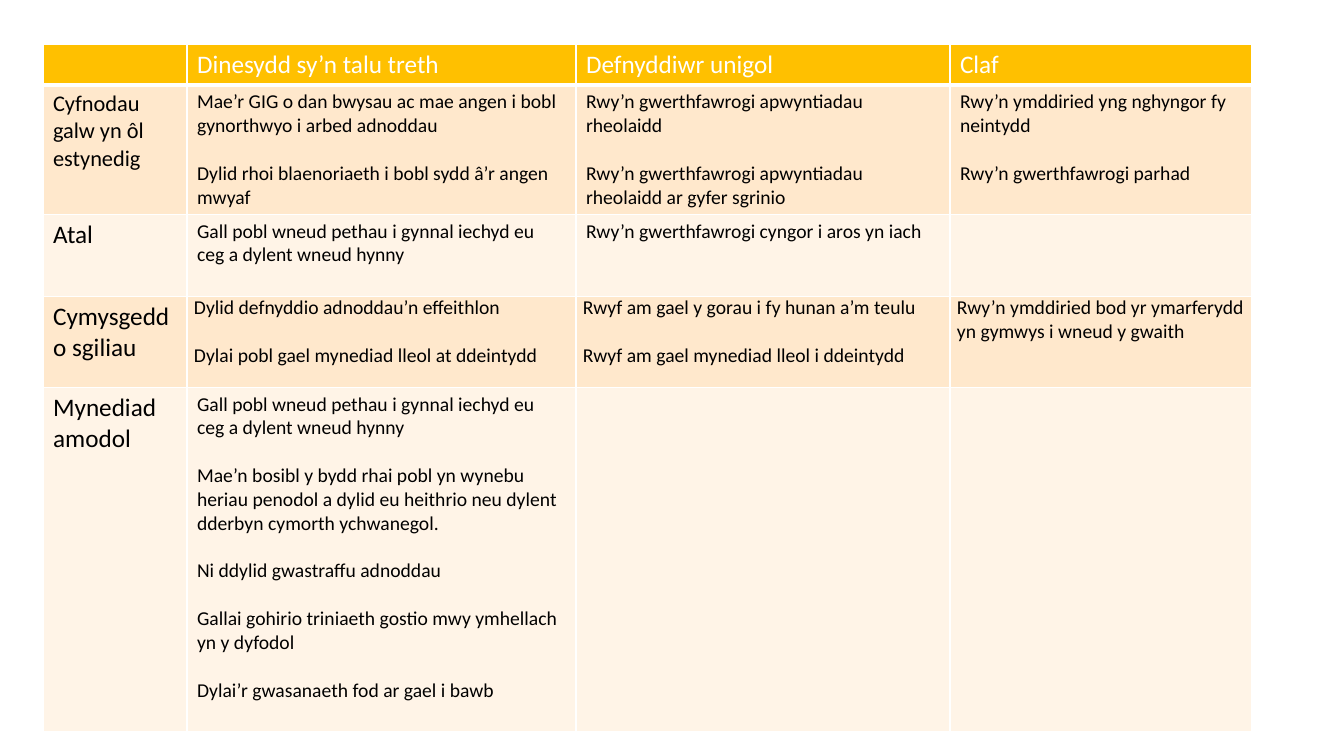
from lxml.etree import SubElement
from pptx import Presentation
from pptx.dml.color import RGBColor
from pptx.oxml.ns import qn
from pptx.util import Inches, Pt

# Content: each cell is a list of paragraphs
HEADINGS = ["", "Dinesydd sy’n talu treth", "Defnyddiwr unigol", "Claf"]
TOPICS = [
    ("Cyfnodau galw yn ôl estynedig", [
        ["Mae’r GIG o dan bwysau ac mae angen i bobl gynorthwyo i arbed adnoddau",
         "Dylid rhoi blaenoriaeth i bobl sydd â’r angen mwyaf"],
        ["Rwy’n gwerthfawrogi apwyntiadau rheolaidd",
         "Rwy’n gwerthfawrogi apwyntiadau rheolaidd ar gyfer sgrinio"],
        ["Rwy’n ymddiried yng nghyngor fy neintydd",
         "Rwy’n gwerthfawrogi parhad"],
    ]),
    ("Atal", [
        ["Gall pobl wneud pethau i gynnal iechyd eu ceg a dylent wneud hynny"],
        ["Rwy’n gwerthfawrogi cyngor i aros yn iach"],
        [],
    ]),
    ("Cymysgedd o sgiliau", [
        ["Dylid defnyddio adnoddau’n effeithlon",
         "Dylai pobl gael mynediad lleol at ddeintydd"],
        ["Rwyf am gael y gorau i fy hunan a’m teulu",
         "Rwyf am gael mynediad lleol i ddeintydd"],
        ["Rwy’n ymddiried bod yr ymarferydd yn gymwys i wneud y gwaith"],
    ]),
    ("Mynediad amodol", [
        ["Gall pobl wneud pethau i gynnal iechyd eu ceg a dylent wneud hynny",
         "Mae’n bosibl y bydd rhai pobl yn wynebu heriau penodol a dylid eu "
         "heithrio neu dylent dderbyn cymorth ychwanegol.",
         "Ni ddylid gwastraffu adnoddau",
         "Gallai gohirio triniaeth gostio mwy ymhellach yn y dyfodol",
         "Dylai’r gwasanaeth fod ar gael i bawb"],
        [],
        [],
    ]),
]

# Layout in px
SLIDE_SIZE = (1344, 756)
TABLE_LEFT, TABLE_TOP = 43, 44
COLUMN_WIDTHS = [144, 389, 374, 302]
ROW_HEIGHTS = [41, 129, 82, 91, 344]
TIGHT_ROW = 3
TIGHT_MARGINS = {"margin_left": 7, "margin_right": 7,
                 "margin_top": 0, "margin_bottom": 0}

# Formats
GOLD = RGBColor(0xFF, 0xC0, 0x00)
PEACH = RGBColor(0xFF, 0xE8, 0xCC)
CREAM = RGBColor(0xFF, 0xF4, 0xE7)
WHITE = RGBColor(0xFF, 0xFF, 0xFF)
BLACK = RGBColor(0x00, 0x00, 0x00)
PARAGRAPH_GAP = Pt(17)


def px(length):
    return round(length * Inches(1) / 100.8)


def add_borders(cell, bottom_width):
    for side in "LRTB":
        width = Pt(bottom_width if side == "B" else 1)
        line = SubElement(cell._tc.get_or_add_tcPr(), qn(f"a:ln{side}"), w=str(width))
        fill = SubElement(line, qn("a:solidFill"))
        SubElement(fill, qn("a:srgbClr"), val=str(WHITE))


def fill_cell(cell, paragraphs, background, size, colour):
    cell.fill.solid()
    cell.fill.fore_color.rgb = background
    frame = cell.text_frame
    frame.text = "\n".join(paragraphs)
    for index, paragraph in enumerate(frame.paragraphs):
        if index:
            paragraph.space_before = PARAGRAPH_GAP
        for name, value in {"name": "Calibri", "size": Pt(size), "bold": False}.items():
            setattr(paragraph.font, name, value)
        paragraph.font.color.rgb = colour


def main():
    presentation = Presentation()
    presentation.slide_width, presentation.slide_height = map(px, SLIDE_SIZE)
    slide = presentation.slides.add_slide(presentation.slide_layouts[6])

    # Table grid
    views = slide.shapes.add_table(
        len(ROW_HEIGHTS), len(COLUMN_WIDTHS), px(TABLE_LEFT), px(TABLE_TOP),
        px(sum(COLUMN_WIDTHS)), px(sum(ROW_HEIGHTS))).table
    for column, width in zip(views.columns, COLUMN_WIDTHS):
        column.width = px(width)
    for row, height in zip(views.rows, ROW_HEIGHTS):
        row.height = px(height)

    # Heading row
    for column, heading in enumerate(HEADINGS):
        cell = views.cell(0, column)
        add_borders(cell, bottom_width=3)
        fill_cell(cell, [heading], GOLD, 18, WHITE)

    # Topic rows
    for row, (topic, opinions) in enumerate(TOPICS, start=1):
        background = PEACH if row % 2 else CREAM
        for column, paragraphs in enumerate([[topic], *opinions]):
            cell = views.cell(row, column)
            add_borders(cell, bottom_width=1)
            topic_size = 16 if row == 1 else 18
            fill_cell(cell, paragraphs, background, 14 if column else topic_size, BLACK)
            if row == TIGHT_ROW and column:
                for name, margin in TIGHT_MARGINS.items():
                    setattr(cell, name, px(margin))

    presentation.save("out.pptx")


if __name__ == "__main__":
    main()
